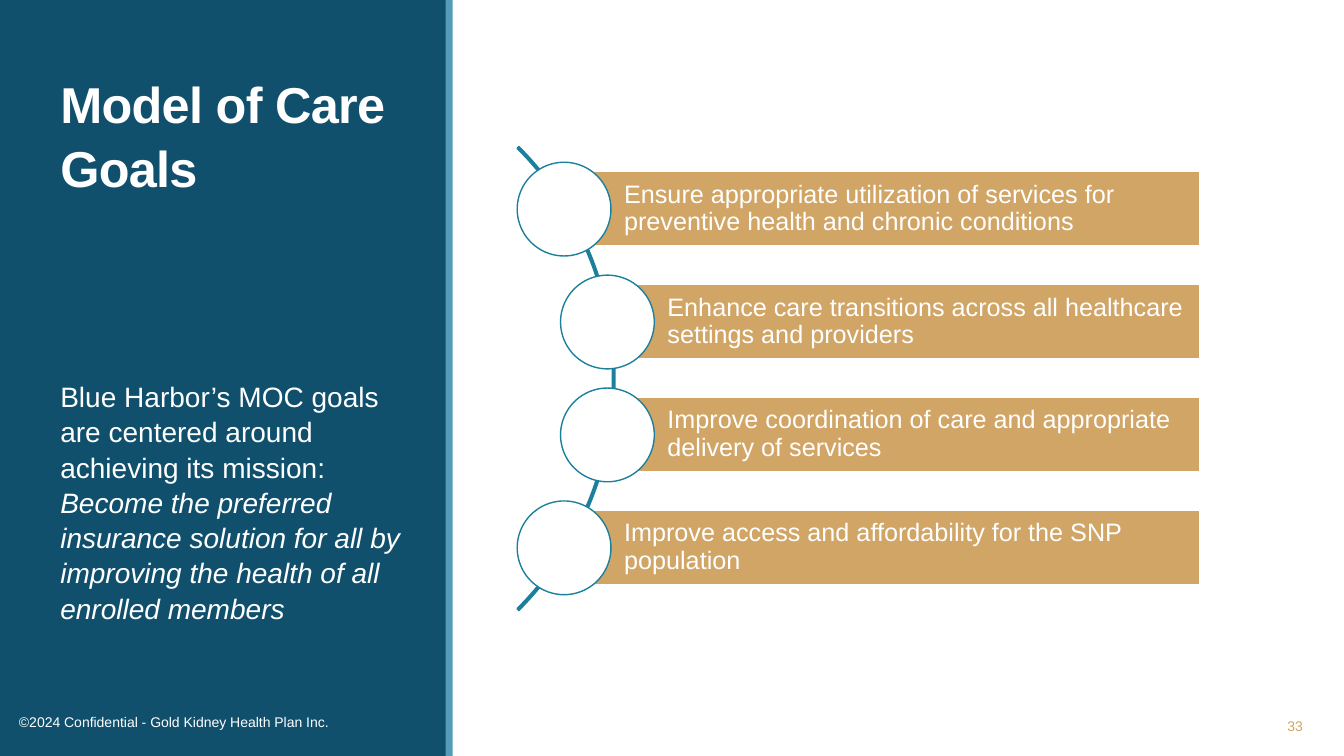
"""Build the Model of Care Goals slide."""
from dataclasses import dataclass

from pptx import Presentation
from pptx.dml.color import RGBColor
from pptx.enum.shapes import MSO_SHAPE
from pptx.enum.text import MSO_ANCHOR, PP_ALIGN
from pptx.util import Pt

RECT, OVAL, ARC = MSO_SHAPE.RECTANGLE, MSO_SHAPE.OVAL, MSO_SHAPE.BLOCK_ARC
TOP, MIDDLE = MSO_ANCHOR.TOP, MSO_ANCHOR.MIDDLE
LEFT, RIGHT = PP_ALIGN.LEFT, PP_ALIGN.RIGHT
EMU_PER_PX = 9144


@dataclass(frozen=True)
class Theme:
    font: str = "Arial"
    navy: str = "10506D"
    sky: str = "559CB9"
    teal: str = "1C809D"
    gold: str = "D1A565"
    white: str = "FFFFFF"
    title: int = 36
    body: int = 20
    goal: int = 18
    small: int = 10


class Deck:
    def __init__(self, theme, width, height):
        self.theme = theme
        self.prs = Presentation()
        self.prs.slide_width = self.px(width)
        self.prs.slide_height = self.px(height)
        self.s = self.prs.slides.add_slide(self.prs.slide_layouts[6])

    def px(self, n):
        return n * EMU_PER_PX

    def shape(self, kind, box, fill, line=None, adjustments=()):
        sp = self.s.shapes.add_shape(kind, *map(self.px, box))
        sp.shadow.inherit = False
        sp.fill.solid()
        sp.fill.fore_color.rgb = RGBColor.from_string(fill)
        if line:
            sp.line.color.rgb = RGBColor.from_string(line)
            sp.line.width = Pt(1)
        else:
            sp.line.fill.background()
        for i, value in enumerate(adjustments):
            sp.adjustments[i] = value
        return sp

    def set_text(self, sp, runs, size, color, insets=(10, 5, 10, 5), anchor=TOP,
                 align=LEFT, spacing=1.0, tracking=0, **font):
        tf = sp.text_frame
        left, top, right, bottom = map(self.px, insets)
        frame = {"word_wrap": True, "vertical_anchor": anchor,
                 "margin_left": left, "margin_top": top,
                 "margin_right": right, "margin_bottom": bottom}
        for name, value in frame.items():
            setattr(tf, name, value)
        p = tf.paragraphs[0]
        p.alignment, p.line_spacing = align, spacing
        for text, extra in runs:
            r = p.add_run()
            r.text = text
            style = {"name": self.theme.font, "size": Pt(size), **font, **extra}
            for name, value in style.items():
                setattr(r.font, name, value)
            r.font.color.rgb = RGBColor.from_string(color)
            if tracking:
                r._r.get_or_add_rPr().set("spc", str(tracking))

    def text(self, box, runs, size, color, **options):
        sp = self.s.shapes.add_textbox(*map(self.px, box))
        self.set_text(sp, runs, size, color, **options)

    def goal(self, left, top, text):
        t = self.theme
        bar = self.shape(RECT, (left, top, 1190 - left, 74), t.gold, t.white)
        self.set_text(bar, [(text, {})], t.goal, t.white, insets=(59, 5, 5, 5),
                      anchor=MIDDLE, spacing=0.9)
        self.shape(OVAL, (left - 47, top - 9, 93, 93), t.white, t.teal)


def main():
    t = Theme()
    deck = Deck(t, 1333, 750)
    deck.shape(RECT, (0, 0, 443, 750), t.navy)
    deck.shape(RECT, (442, 0, 7, 750), t.sky)
    deck.text((1049, 701, 253, 38), [("33", {})], t.small, t.gold,
              anchor=MIDDLE, align=RIGHT)
    deck.text((9, 703, 417, 27),
              [("©2024 Confidential - Gold Kidney Health Plan Inc.", {})],
              t.small, t.white, anchor=MIDDLE)
    deck.text((50, 65, 350, 250), [("Model of Care Goals", {})],
              t.title, t.white, spacing=1.05, tracking=-50, bold=True)
    mission = [
        ("Blue Harbor’s MOC goals are centered around achieving its mission: ", {}),
        ("Become the preferred insurance solution for all by improving "
         "the health of all enrolled members", {"italic": True}),
    ]
    deck.text((50, 370, 350, 320), mission, t.body, t.white,
              insets=(10, 5, 0, 5), spacing=1.05)

    deck.shape(ARC, (-41, 50, 651, 651), t.teal, t.teal, (189, 27, 0.4 / 100))
    goals = [
        (560, "Ensure appropriate utilization of services for preventive health "
              "and chronic conditions"),
        (603, "Enhance care transitions across all healthcare settings and providers"),
        (603, "Improve coordination of care and appropriate delivery of services"),
        (560, "Improve access and affordability for the SNP population"),
    ]
    for row, (left, text) in enumerate(goals):
        deck.goal(left, 170 + 112 * row, text)
    deck.prs.save("out.pptx")


if __name__ == "__main__":
    main()
